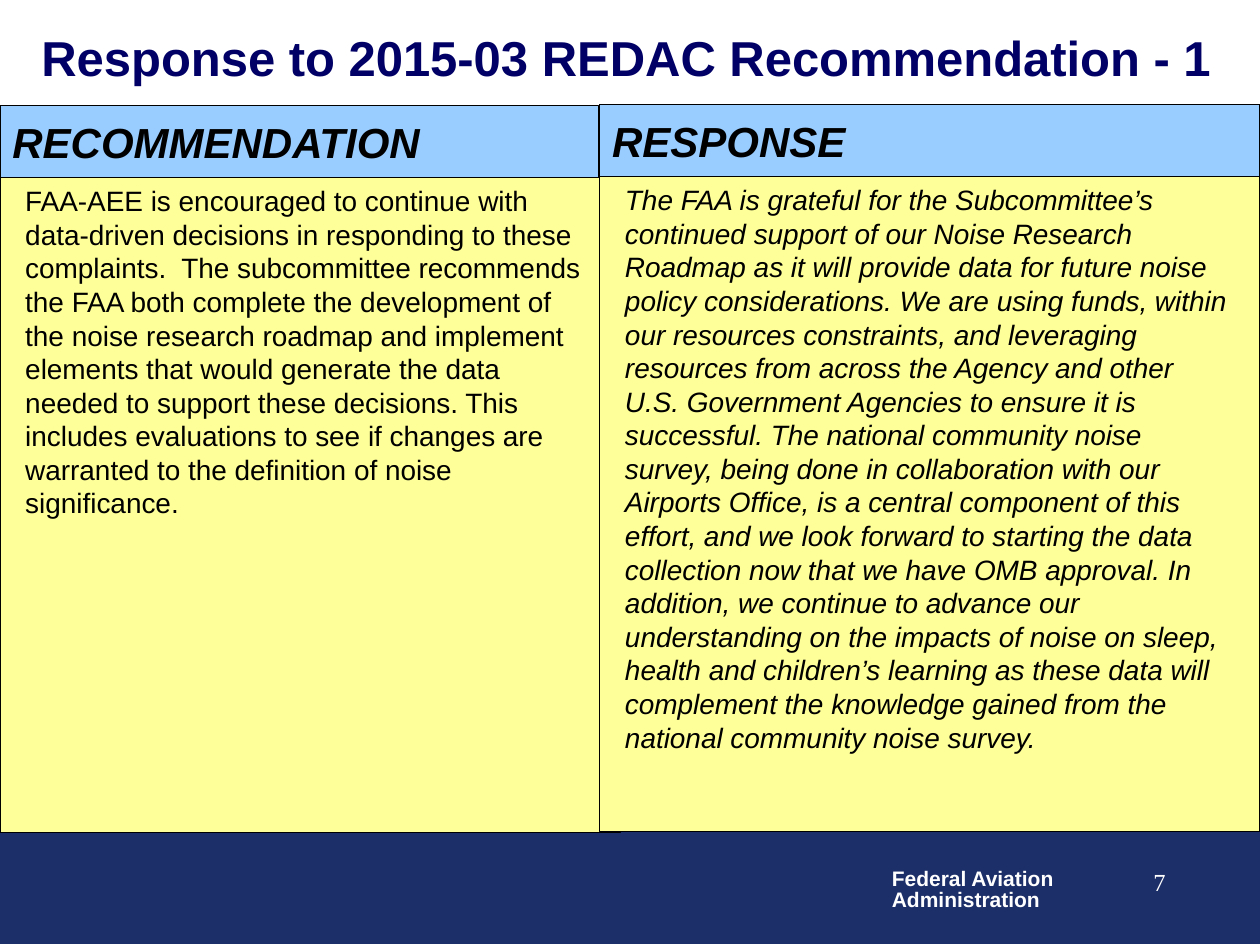
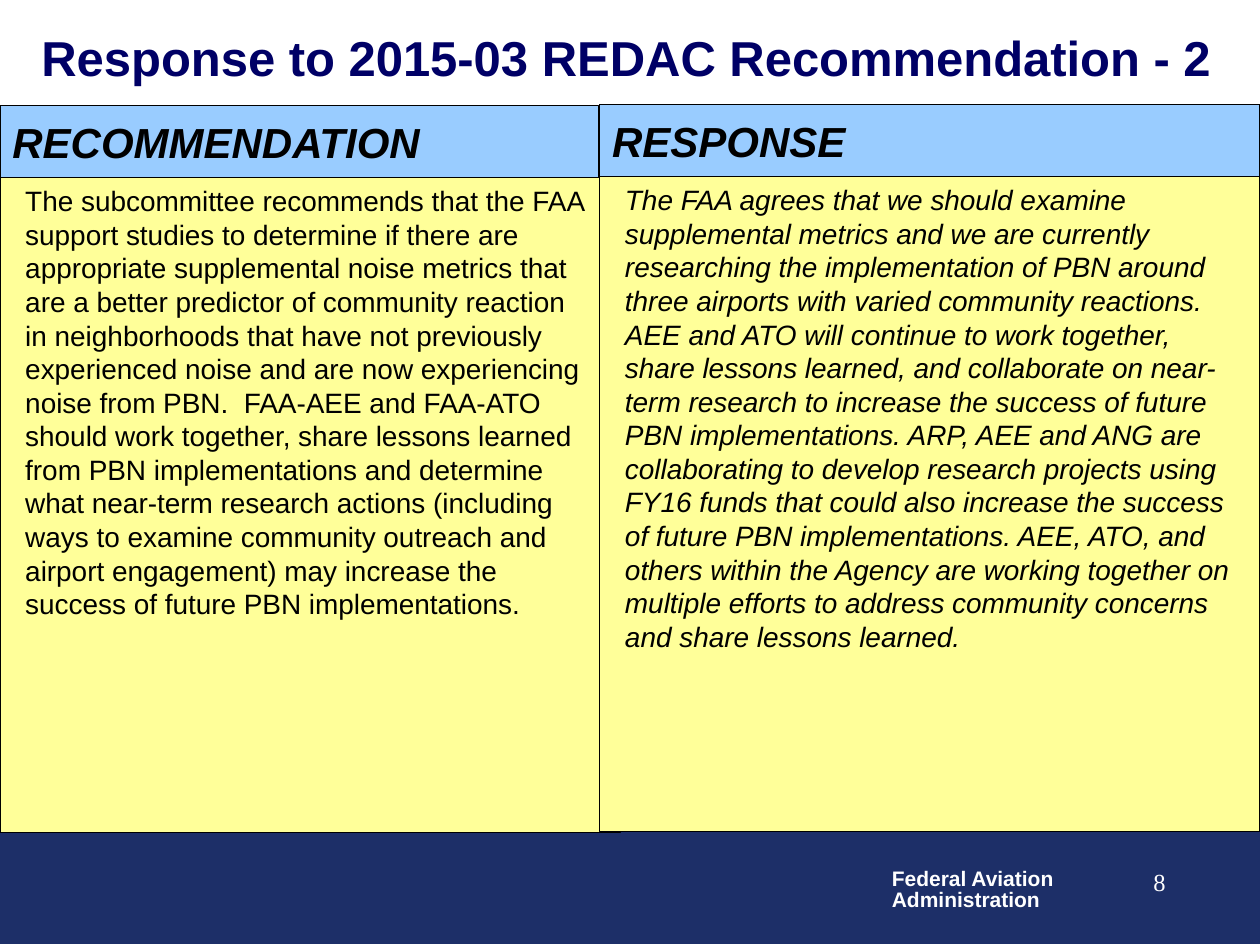
from pptx import Presentation
from pptx.dml.color import RGBColor
from pptx.enum.shapes import MSO_SHAPE
from pptx.enum.text import MSO_ANCHOR as ANCHOR, MSO_AUTO_SIZE as AUTOSIZE, PP_ALIGN as ALIGN
from pptx.util import Cm, Pt

# Content
TITLE = "Response to 2015-03 REDAC Recommendation - {}"
AGENCY = ("Federal Aviation", "Administration")
FIRST_PAGE = 7
REPLIES = [
    {
        "recommendation": "FAA-AEE is encouraged to continue with data-driven decisions in "
        "responding to these complaints.  The subcommittee recommends the FAA both complete "
        "the development of the noise research roadmap and implement elements that would "
        "generate the data needed to support these decisions. This includes evaluations to "
        "see if changes are warranted to the definition of noise significance.",
        "response": "The FAA is grateful for the Subcommittee’s continued support of our Noise "
        "Research Roadmap as it will provide data for future noise policy considerations. We "
        "are using funds, within our resources constraints, and leveraging resources from "
        "across the Agency and other U.S. Government Agencies to ensure it is successful. The "
        "national community noise survey, being done in collaboration with our Airports "
        "Office, is a central component of this effort, and we look forward to starting the "
        "data collection now that we have OMB approval. In addition, we continue to advance "
        "our understanding on the impacts of noise on sleep, health and children’s learning "
        "as these data will complement the knowledge gained from the national community "
        "noise survey.",
    },
    {
        "recommendation": "The subcommittee recommends that the FAA support studies to "
        "determine if there are appropriate supplemental noise metrics that are a better "
        "predictor of community reaction in neighborhoods that have not previously "
        "experienced noise and are now experiencing noise from PBN.  FAA-AEE and FAA-ATO "
        "should work together, share lessons learned from PBN implementations and determine "
        "what near-term research actions (including ways to examine community outreach and "
        "airport engagement) may increase the success of future PBN implementations.",
        "response": "The FAA agrees that we should examine supplemental metrics and we are "
        "currently researching the implementation of PBN around three airports with varied "
        "community reactions. AEE and ATO will continue to work together, share lessons "
        "learned, and collaborate on near-term research to increase the success of future PBN "
        "implementations. ARP, AEE and ANG are collaborating to develop research projects "
        "using FY16 funds that could also increase the success of future PBN implementations. "
        "AEE, ATO, and others within the Agency are working together on multiple efforts to "
        "address community concerns and share lessons learned.",
    },
]

# Style
NAVY = RGBColor(0x1D, 0x2F, 0x68)
TITLE_BLUE = RGBColor(0x00, 0x00, 0x66)
HEADER_BLUE = RGBColor(0x99, 0xCC, 0xFF)
PALE_YELLOW = RGBColor(0xFF, 0xFF, 0x99)
BLACK = RGBColor(0, 0, 0)
WHITE = RGBColor(0xFF, 0xFF, 0xFF)
SANS, SERIF = "Arial", "Times New Roman"

# Layout in centimetres; the left body runs under the right column
PAGE_W, PAGE_H = 25.4, 19.05
HEADER_H, BODY_H, BAND_H = 1.45, 13.2, 2.26
SPLIT = 12.09
COLUMNS = [
    # key, left, top, header width, body width, italic body
    ("recommendation", 0, 2.13, SPLIT - 0.02, 12.5, False),
    ("response", SPLIT, 2.11, PAGE_W - SPLIT, PAGE_W - SPLIT, True),
]


def add_text(p, text, size, color, font=SANS, bold=False, italic=False):
    r = p.add_run()
    r.text = text
    r.font.name, r.font.size = font, Pt(size)
    r.font.bold, r.font.italic = bold, italic
    r.font.color.rgb = color


def add_box(s, left, top, width, height, fill, line):
    sp = s.shapes.add_shape(MSO_SHAPE.RECTANGLE, Cm(left), Cm(top), Cm(width), Cm(height))
    sp.shadow.inherit = False
    sp.fill.solid()
    sp.fill.fore_color.rgb = fill
    sp.line.color.rgb = line
    sp.line.width = Pt(0.75)
    tf = sp.text_frame
    tf.word_wrap = True
    tf.paragraphs[0].alignment = ALIGN.LEFT
    return tf


def add_footer(s, page):
    add_box(s, 0, 16.76, PAGE_W, BAND_H, NAVY, NAVY)

    # Agency name
    tf = s.shapes.add_textbox(Cm(17.73), Cm(17.4), Cm(3.8), Cm(1.12)).text_frame
    tf.word_wrap = False
    tf.auto_size = AUTOSIZE.SHAPE_TO_FIT_TEXT
    for i, line in enumerate(AGENCY):
        p = tf.add_paragraph() if i else tf.paragraphs[0]
        p.line_spacing = 0.85
        add_text(p, line, 12, WHITE, bold=True)

    # Page number
    tf = s.shapes.add_textbox(Cm(18.47), Cm(17.35), Cm(5.28), Cm(1.27)).text_frame
    tf.word_wrap = True
    p = tf.paragraphs[0]
    p.alignment = ALIGN.RIGHT
    add_text(p, str(page), 14, WHITE, font=SERIF)


def add_title(s, text):
    sp = s.shapes.title
    sp.left, sp.top, sp.width, sp.height = Cm(0.58), Cm(0.3), Cm(24.49), Cm(1.7)
    tf = sp.text_frame
    tf.vertical_anchor = ANCHOR.MIDDLE
    tf.auto_size = AUTOSIZE.NONE
    p = tf.paragraphs[0]
    p.alignment = ALIGN.LEFT
    add_text(p, text, 28, TITLE_BLUE, bold=True)


def add_columns(s, reply):
    # Bodies first, so that the headers lie on top
    for key, left, top, _, width, italic in COLUMNS:
        tf = add_box(s, left, top + HEADER_H, width, BODY_H, PALE_YELLOW, BLACK)
        tf.vertical_anchor = ANCHOR.TOP
        tf.margin_left = tf.margin_right = Cm(0.51)
        add_text(tf.paragraphs[0], reply[key], 16, BLACK, italic=italic)
    for key, left, top, width, _, _ in COLUMNS:
        tf = add_box(s, left, top, width, HEADER_H, HEADER_BLUE, BLACK)
        tf.vertical_anchor = ANCHOR.MIDDLE
        add_text(tf.paragraphs[0], key.upper(), 24, BLACK, bold=True, italic=True)


def main():
    prs = Presentation()
    prs.slide_width, prs.slide_height = Cm(PAGE_W), Cm(PAGE_H)
    title_only = prs.slide_layouts[5]
    for i, reply in enumerate(REPLIES):
        s = prs.slides.add_slide(title_only)
        add_footer(s, FIRST_PAGE + i)
        add_columns(s, reply)
        add_title(s, TITLE.format(i + 1))
    prs.save("out.pptx")


if __name__ == "__main__":
    main()
